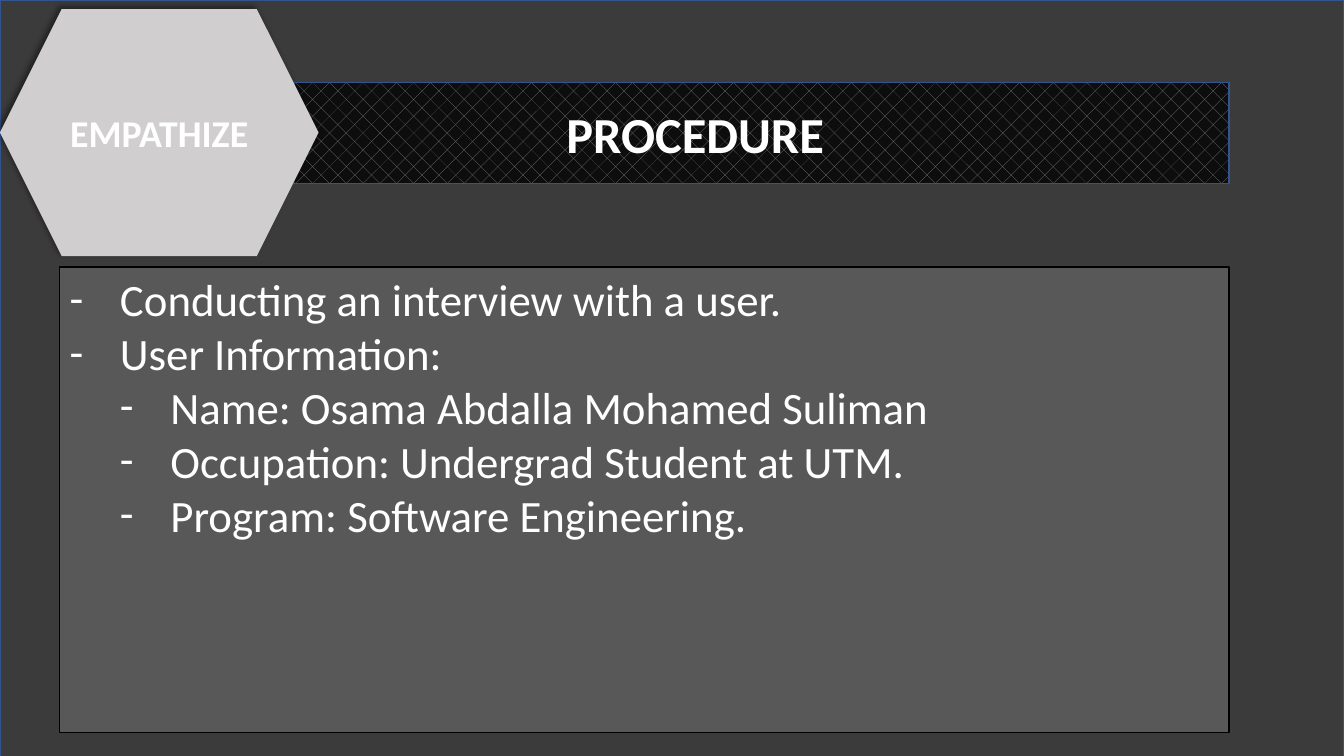
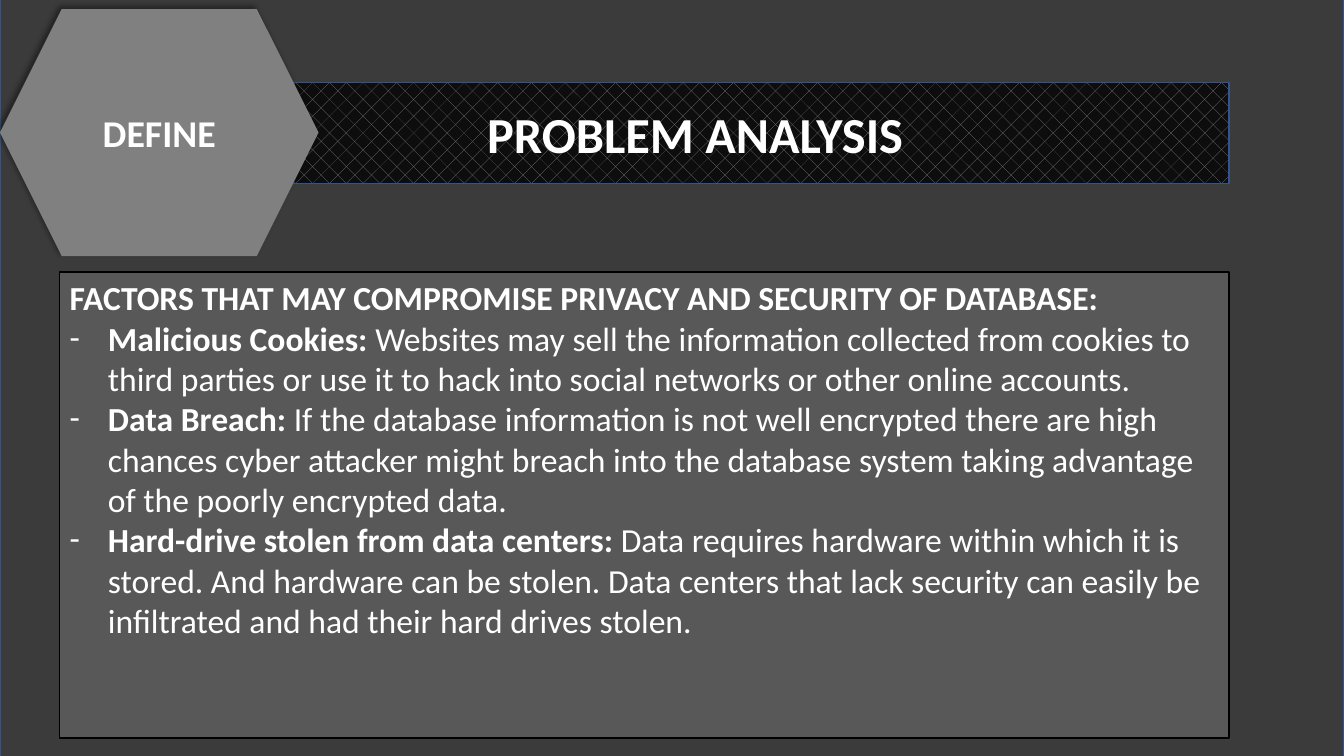
from lxml.etree import SubElement
from pptx import Presentation
from pptx.dml.color import RGBColor
from pptx.enum.dml import MSO_PATTERN
from pptx.enum.shapes import MSO_SHAPE
from pptx.enum.text import MSO_ANCHOR, MSO_AUTO_SIZE, PP_ALIGN
from pptx.oxml.ns import qn
from pptx.util import Inches, Pt

COLORS = {
    "black": "000000", "white": "FFFFFF", "edge": "325491",
    "weave": "808080", "band": "0D0D0D", "light": "D0CECE", "grey": "808080",
}
FONT = "Calibri"
WIDTH, HEIGHT = 13.33, 7.5


def color(name):
    return RGBColor.from_string(COLORS[name])


def place(shape, left, top, width, height):
    shape.left, shape.top = Inches(left), Inches(top)
    shape.width, shape.height = Inches(width), Inches(height)


def write(shape, rows, size, bold=False, align=PP_ALIGN.LEFT,
          anchor=MSO_ANCHOR.MIDDLE, hang=0):
    """Fill a shape with rows of (level, runs); level None has no bullet."""
    frame = shape.text_frame
    frame.word_wrap = True
    frame.auto_size = MSO_AUTO_SIZE.NONE
    frame.vertical_anchor = anchor
    for i, (level, runs) in enumerate(rows):
        para = frame.add_paragraph() if i else frame.paragraphs[0]
        para.alignment = align
        para.level = level or 0
        para.space_before = para.space_after = Pt(0)
        bullet(para, level, hang)
        for text, strong in runs:
            run = para.add_run()
            run.text = text
            font = run.font
            font.name, font.size = FONT, Pt(size)
            font.bold = bold or strong
            font.color.rgb = color("white")


def bullet(para, level, hang):
    props = para._p.get_or_add_pPr()
    if level is None:
        props.set("marL", "0")
        props.set("indent", "0")
        SubElement(props, qn("a:buNone"))
        return
    props.set("marL", str(Inches(hang + level * 0.5)))
    props.set("indent", str(Inches(-hang)))
    SubElement(props, qn("a:buFont"), typeface=FONT)
    SubElement(props, qn("a:buChar"), char="-")


class Deck:
    def __init__(self):
        self.file = Presentation()
        self.file.slide_width = Inches(WIDTH)
        self.file.slide_height = Inches(HEIGHT)
        self.slide = None

    def start(self, top):
        """Add a slide with its dark backdrop behind the placeholders."""
        self.slide = self.file.slides.add_slide(self.file.slide_layouts[1])
        back = self.shape(MSO_SHAPE.RECTANGLE, 0, top, WIDTH, 7.58)
        self.paint(back, "black", 77)
        self.edge(back, "edge")
        back._element.getparent().insert(2, back._element)

    def shape(self, kind, *box):
        shape = self.slide.shapes.add_shape(kind, *map(Inches, box))
        shape.shadow.inherit = False
        return shape

    def paint(self, shape, name, alpha=100):
        shape.fill.solid()
        shape.fill.fore_color.rgb = color(name)
        if alpha < 100:
            tint = shape._element.spPr.find(qn("a:solidFill"))[0]
            SubElement(tint, qn("a:alpha"), val=str(alpha * 1000))

    def edge(self, shape, name):
        shape.line.color.rgb = color(name)
        shape.line.width = Pt(1)

    def title(self, text):
        band = self.slide.shapes.title
        place(band, 1.6, 0.82, 10.59, 1)
        band.fill.patterned()
        band.fill.pattern = MSO_PATTERN.DIAGONAL_BRICK
        band.fill.fore_color.rgb = color("weave")
        band.fill.back_color.rgb = color("band")
        self.edge(band, "edge")
        write(band, [(None, [(text, True)])], 36, align=PP_ALIGN.CENTER)

    def badge(self, text, fill):
        badge = self.shape(MSO_SHAPE.HEXAGON, 0, 0.09, 3.16, 2.45)
        self.paint(badge, fill)
        badge.line.fill.background()
        effects = badge._element.spPr.find(qn("a:effectLst"))
        shade = SubElement(effects, qn("a:outerShdw"), blurRad=str(Pt(4)),
                           dist=str(Pt(3)), dir=str(225 * 60000), algn="br",
                           rotWithShape="0")
        tint = SubElement(shade, qn("a:srgbClr"), val=COLORS["black"])
        SubElement(tint, qn("a:alpha"), val="40000")
        write(badge, [(None, [(text, True)])], 27, align=PP_ALIGN.CENTER)

    def body(self, rows, top, size, hang):
        panel = self.slide.placeholders[1]
        place(panel, 0.59, top, 11.6, 4.62)
        self.paint(panel, "white", 15)
        self.edge(panel, "black")
        write(panel, rows, size, anchor=MSO_ANCHOR.TOP, hang=hang)

    def save(self):
        self.file.save("out.pptx")


STEPS = [
    (0, "Conducting an interview with a user."),
    (0, "User Information:"),
    (1, "Name: Osama Abdalla Mohamed Suliman"),
    (1, "Occupation: Undergrad Student at UTM."),
    (1, "Program: Software Engineering."),
]
HEADING = "FACTORS THAT MAY COMPROMISE PRIVACY AND SECURITY OF DATABASE:"
RISKS = [
    ("Malicious Cookies:",
     " Websites may sell the information collected from cookies to third "
     "parties or use it to hack into social networks or other online "
     "accounts."),
    ("Data Breach:",
     " If the database information is not well encrypted there are high "
     "chances cyber attacker might breach into the database system taking "
     "advantage of the poorly encrypted data."),
    ("Hard-drive stolen from data centers:",
     " Data requires hardware within which it is stored. And hardware can be "
     "stolen. Data centers that lack security can easily be infiltrated and "
     "had their hard drives stolen."),
]


def main():
    deck = Deck()

    deck.start(0)
    deck.title("PROCEDURE")
    deck.badge("EMPATHIZE", "light")
    deck.body([(level, [(text, False)]) for level, text in STEPS],
              2.65, 32, 0.5)

    deck.start(-0.04)
    deck.title("PROBLEM ANALYSIS")
    deck.badge("DEFINE", "grey")
    risks = [(0, [(name, True), (text, False)]) for name, text in RISKS]
    deck.body([(None, [(HEADING, True)])] + risks, 2.7, 24, 0.38)

    deck.save()


if __name__ == "__main__":
    main()
